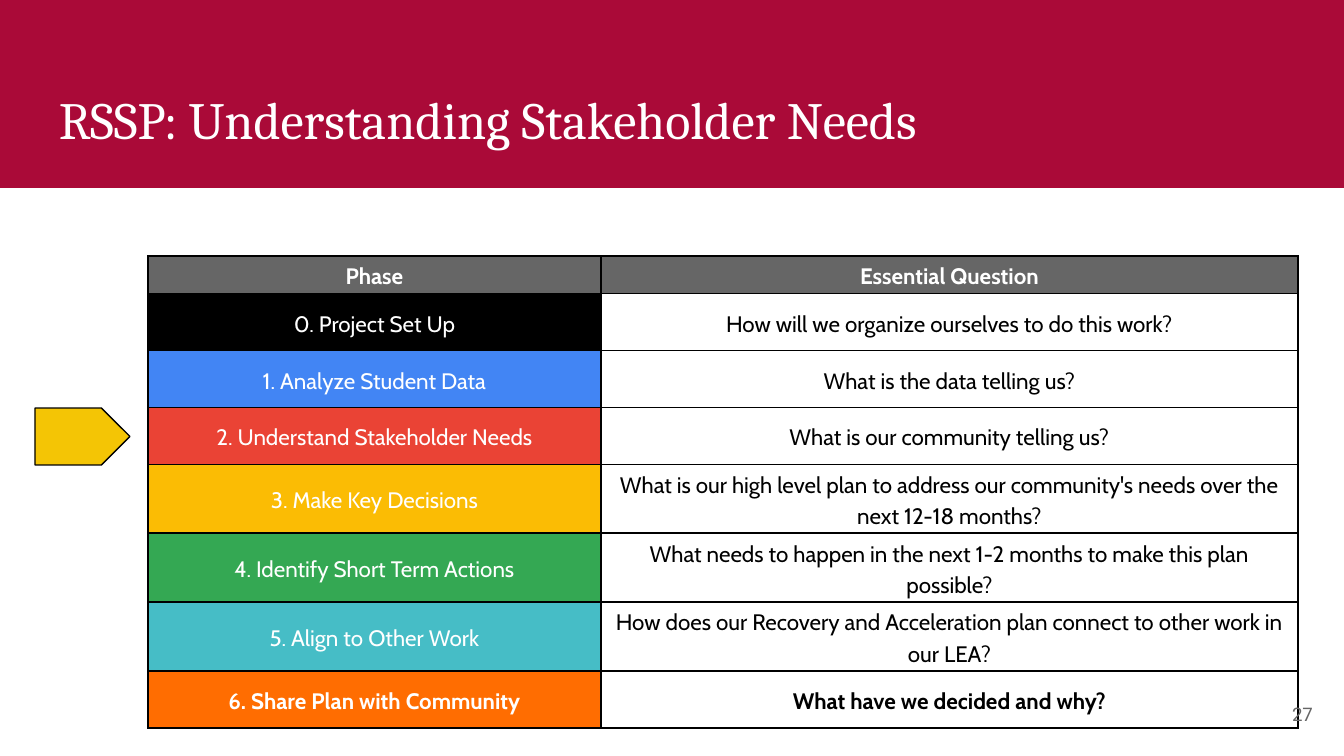
import lxml.etree
import pptx
import pptx.dml.color
import pptx.enum.shapes
import pptx.enum.text
import pptx.oxml.ns
import pptx.util

RGBColor = pptx.dml.color.RGBColor
Align = pptx.enum.text.PP_ALIGN
Anchor = pptx.enum.text.MSO_ANCHOR
Shape = pptx.enum.shapes.MSO_SHAPE

WHITE = RGBColor(0xFF, 0xFF, 0xFF)
BLACK = RGBColor(0x00, 0x00, 0x00)
GRAY = RGBColor(0x66, 0x66, 0x66)
CRIMSON = RGBColor(0xAA, 0x0A, 0x38)
GOLD = RGBColor(0xF4, 0xC5, 0x05)
BLUE = RGBColor(0x42, 0x85, 0xF4)
RED = RGBColor(0xEA, 0x43, 0x35)
YELLOW = RGBColor(0xFB, 0xBC, 0x04)
GREEN = RGBColor(0x34, 0xA8, 0x53)
TEAL = RGBColor(0x46, 0xBD, 0xC6)
ORANGE = RGBColor(0xFF, 0x6D, 0x01)

PHASES = [
    ("0. Project Set Up", "How will we organize ourselves to do this work?", BLACK),
    ("1. Analyze Student Data", "What is the data telling us?", BLUE),
    ("2. Understand Stakeholder Needs", "What is our community telling us?", RED),
    ("3. Make Key Decisions",
     "What is our high level plan to address our community's needs over the next 12-18 months?", YELLOW),
    ("4. Identify Short Term Actions",
     "What needs to happen in the next 1-2 months to make this plan possible?", GREEN),
    ("5. Align to Other Work",
     "How does our Recovery and Acceleration plan connect to other work in our LEA?", TEAL),
    ("6. Share Plan with Community", "What have we decided and why?", ORANGE),
]


def px(length):
    return pptx.util.Emu(round(length * 914400 / 134.4))


def write(frame, text, font="Cabin", size=12, color=BLACK, bold=False, align=Align.LEFT, spacing=None):
    para = frame.paragraphs[0]
    para.alignment = align
    if spacing:
        para.line_spacing = spacing
    span = para.add_run()
    span.text = text
    span.font.name = font
    span.font.size = pptx.util.Pt(size)
    span.font.color.rgb = color
    span.font.bold = bold


class SlideBuilder:
    inset = 13
    cell_inset = (4, 3)
    border_width = 0.94

    def __init__(self, page):
        self.page = page

    def place(self, item, left, top, width, height):
        item.left, item.top = px(left), px(top)
        item.width, item.height = px(width), px(height)

    def shape(self, kind, bounds, fill, line=None):
        item = self.page.shapes.add_shape(kind, *map(px, bounds))
        item.shadow.inherit = False
        item.fill.solid()
        item.fill.fore_color.rgb = fill
        if line is None:
            item.line.fill.background()
        else:
            item.line.color.rgb = line
            item.line.width = pptx.util.Pt(0.75)
        return item

    def frame(self, box, anchor):
        frame = box.text_frame
        frame.word_wrap = True
        frame.auto_size = pptx.enum.text.MSO_AUTO_SIZE.NONE
        frame.vertical_anchor = anchor
        frame.margin_left = frame.margin_right = px(self.inset)
        frame.margin_top = frame.margin_bottom = px(self.inset)
        return frame

    def title(self, text, bounds, band):
        box = self.page.shapes.title
        self.place(box, *bounds)
        band.element.addnext(box.element)
        write(self.frame(box, Anchor.TOP), text, font="Cambria", size=28, color=WHITE)

    def text(self, text, bounds, **style):
        box = self.page.shapes.add_textbox(*map(px, bounds))
        write(self.frame(box, Anchor.MIDDLE), text, **style)

    def cell(self, cell, text, fill, **style):
        side, edge = self.cell_inset
        cell.margin_left = cell.margin_right = px(side)
        cell.margin_top = cell.margin_bottom = px(edge)
        cell.vertical_anchor = Anchor.MIDDLE
        write(cell.text_frame, text, align=Align.CENTER, spacing=1.15, **style)
        self.borders(cell)
        if fill is None:
            cell.fill.background()
        else:
            cell.fill.solid()
            cell.fill.fore_color.rgb = fill

    def borders(self, cell):
        qn = pptx.oxml.ns.qn
        properties = cell._tc.get_or_add_tcPr()
        for side in ("a:lnL", "a:lnR", "a:lnT", "a:lnB"):
            line = lxml.etree.SubElement(properties, qn(side), w=str(pptx.util.Pt(self.border_width)))
            fill = lxml.etree.SubElement(line, qn("a:solidFill"))
            lxml.etree.SubElement(fill, qn("a:srgbClr"), val=str(BLACK))

    def phase_table(self, left, top, widths, header_height, row_height):
        height = header_height + row_height * len(PHASES)
        bounds = map(px, (left, top, sum(widths), height))
        table = self.page.shapes.add_table(len(PHASES) + 1, len(widths), *bounds).table
        table.first_row = table.horz_banding = False
        for column, width in zip(table.columns, widths):
            column.width = px(width)
        for index, row in enumerate(table.rows):
            row.height = px(row_height if index else header_height)
        for index, heading in enumerate(("Phase", "Essential Question")):
            self.cell(table.cell(0, index), heading, GRAY, color=WHITE, bold=True)
        for index, (phase, question, fill) in enumerate(PHASES, start=1):
            bold = index == len(PHASES)
            self.cell(table.cell(index, 0), phase, fill, color=WHITE, bold=bold)
            self.cell(table.cell(index, 1), question, None, bold=bold)


def main():
    deck = pptx.Presentation()
    deck.slide_width, deck.slide_height = px(1344), px(756)
    builder = SlideBuilder(deck.slides.add_slide(deck.slide_layouts[5]))

    band = builder.shape(Shape.RECTANGLE, (0, 0, 1344, 188), CRIMSON)
    builder.title("RSSP: Understanding Stakeholder Needs", (46, 74, 1252, 91), band)
    builder.phase_table(148, 256, (453, 697), 31, 57)
    builder.shape(Shape.PENTAGON, (35, 408, 95, 57), GOLD, BLACK)
    builder.text("27", (1246, 685, 80, 58), font="Roboto", size=10, color=GRAY, align=Align.RIGHT)

    deck.save("out.pptx")


if __name__ == "__main__":
    main()
